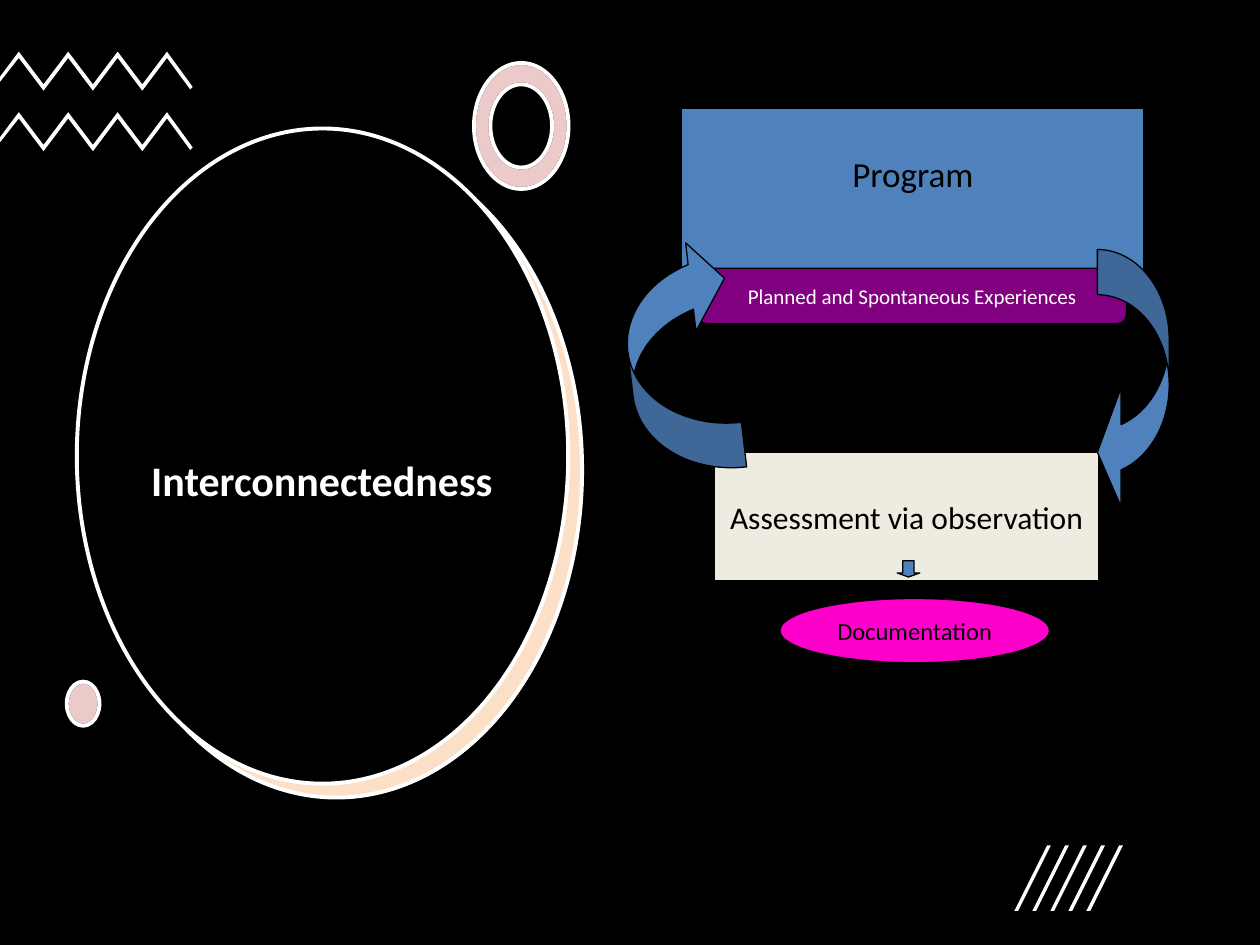
"""Builds the Interconnectedness slide: a titled oval beside a program and assessment cycle."""
import lxml.etree
import pptx
import pptx.util
import pptx.dml.color
import pptx.enum.shapes
import pptx.enum.text
import pptx.oxml.ns

theme = {
    "font": "Calibri", "black": "000000", "white": "FFFFFF", "blue": "4F81BD",
    "peach": "F79646", "red": "C0504D", "plum": "800080", "cream": "EEECE1",
    "pink": "FF00CC", "title": 24, "head": 20.1, "body": 18, "note": 14,
    "small": 12, "thin": 0.75, "thick": 2.25,
}
kinds = pptx.enum.shapes.MSO_SHAPE
anchors = pptx.enum.text.MSO_ANCHOR
name = pptx.oxml.ns.qn
cell = pptx.util.Inches(0.1)
cols, rows = 100, 75


def paint(shape, fill, line=None, width=0, alpha=None):
    shape.shadow.inherit = False
    shape.fill.solid()
    shape.fill.fore_color.rgb = pptx.dml.color.RGBColor.from_string(theme[fill])
    if alpha:
        tone = shape.fill._xPr.find(".//" + name("a:srgbClr"))
        mark = lxml.etree.SubElement(tone, name("a:alpha"))
        mark.set("val", str(alpha * 1000))
    if line:
        shape.line.color.rgb = pptx.dml.color.RGBColor.from_string(theme[line])
        shape.line.width = pptx.util.Pt(width)
    else:
        shape.line.fill.background()


def write(shape, text, size, color, bold=False):
    frame = shape.text_frame
    frame.text = text
    frame.vertical_anchor = anchors.MIDDLE
    para = frame.paragraphs[0]
    para.alignment = pptx.enum.text.PP_ALIGN.CENTER
    font = para.runs[0].font
    font.name, font.bold = theme["font"], bold
    font.size = pptx.util.Pt(theme[size])
    font.color.rgb = pptx.dml.color.RGBColor.from_string(theme[color])


deck = pptx.Presentation()
deck.slide_width, deck.slide_height = cols * cell, rows * cell
slide = deck.slides.add_slide(deck.slide_layouts[5])
shapes = slide.shapes
thin, thick = theme["thin"], theme["thick"]

ovals = [
    (kinds.RECTANGLE, (0, 0, cols, rows), "black", None, 0, None),
    (kinds.OVAL, (7.3, 11.4, 39, 52), "white", None, 0, None),
    (kinds.OVAL, (7.2, 11.3, 39, 52), "peach", "white", thick, 30),
    (kinds.OVAL, (6.1, 10.2, 39, 52), "black", "white", thick, None),
    (kinds.OVAL, (5.3, 54.1, 2.6, 3.5), "white", "black", thick, None),
    (kinds.OVAL, (5.3, 54.1, 2.6, 3.5), "red", "white", thick, 30),
]
for kind, box, fill, line, width, alpha in ovals:
    paint(shapes.add_shape(kind, *[int(n * cell) for n in box]), fill, line, width, alpha)

title = shapes.title
title.left, title.top, title.width, title.height = [int(n * cell) for n in (9, 20.5, 33.1, 35.2)]
write(title, "Interconnectedness", "title", "white", True)
title.text_frame.word_wrap = True
shapes._spTree.append(title._element)

bow = 0.55
knots = [(0, -1), (-bow, -1), (-1, -bow), (-1, 0), (-1, bow), (-bow, 1), (0, 1),
         (bow, 1), (1, bow), (1, 0), (1, -bow), (bow, -1), (0, -1)]
ring = [
    [(41.37 + wide * x, 10 + high * y) for x, y in knots]
    for wide, high in ((3.75, 5), (-2.45, 3.3))
]
waves = shapes.add_group_shape().shapes
forms = []
for top in (4.1, 8.9):
    crest = [(1.5 + 1.96 * i, top + 2.6 * (i % 2)) for i in range(7)]
    under = [(x, y + 0.5) for x, y in reversed(crest)]
    wave = crest + [(15.3, top + 2.8), (15.1, top + 3)] + under + [(0, top + 2.4), (0, top + 2)]
    forms.append((waves, [wave], "white", None, 0, None))
forms.append((shapes, ring, "white", "black", thick, None))
forms.append((shapes, ring, "red", "white", thick, 30))
lines = shapes.add_group_shape().shapes
for i in range(5):
    left = 80.5 + 1.43 * i
    slash = [(left + 0.3, 72.3), (left, 72.3), (left + 2.6, 67.1), (left + 2.9, 67.1)]
    forms.append((lines, [slash], "white", None, 0, None))
for home, loops, fill, line, width, alpha in forms:
    loops = [[(x * cell, y * cell) for x, y in loop] for loop in loops]
    pen = home.build_freeform(*loops[0][0])
    pen.add_line_segments(loops[0][1:], close=True)
    for loop in loops[1:]:
        pen.move_to(*loop[0])
        pen.add_line_segments(loop[1:], close=True)
    form = pen.convert_to_shape()
    paint(form, fill, line, width, alpha)
    if home is shapes:
        legs = list(form._element.iter(name("a:lnTo")))
        for i in range(0, len(legs), 3):
            curve = lxml.etree.Element(name("a:cubicBezTo"))
            legs[i].addprevious(curve)
            for leg in legs[i:i + 3]:
                curve.append(leg[0])
                leg.getparent().remove(leg)

steps = [
    (kinds.FLOWCHART_PROCESS, (54.1, 8.6, 36.7, 12.8), "blue", "Program", "head", "black"),
    (kinds.FLOWCHART_ALTERNATE_PROCESS, (55.4, 21.3, 34, 4.4), "plum",
     "Planned and Spontaneous Experiences", "small", "white"),
    (kinds.FLOWCHART_PROCESS, (56.7, 35.9, 30.5, 10.2), "cream",
     "Assessment via observation", "body", "black"),
    (kinds.OVAL, (61.9, 47.5, 21.4, 5.1), "pink", "Documentation", "note", "black"),
]
for kind, box, fill, text, size, color in steps:
    step = shapes.add_shape(kind, *[int(n * cell) for n in box])
    paint(step, fill, "black", thin)
    write(step, text, size, color)
    step.text_frame.word_wrap = False
    step.text_frame.paragraphs[0].space_after = pptx.util.Pt(6)
    if text == "Program":
        step.text_frame.word_wrap = True
        step.text_frame.vertical_anchor = anchors.TOP
        step.text_frame.margin_top = int(3.5 * cell)

arrows = [
    (kinds.DOWN_ARROW, (71.2, 44.5, 1.8, 1.3), 0, (0.5, 0.25)),
    (kinds.CURVED_LEFT_ARROW, (49.9, 19, 8.3, 18.6), 173.3, (0.43, 0.85, 0.33)),
    (kinds.CURVED_LEFT_ARROW, (87.1, 19.8, 5.7, 20.8), 0, (0.63, 1.65, 0.33)),
]
for kind, box, turn, bends in arrows:
    arrow = shapes.add_shape(kind, *[int(n * cell) for n in box])
    arrow.rotation = turn
    for i, bend in enumerate(bends):
        arrow.adjustments[i] = bend
    paint(arrow, "blue", "black", thin)

deck.save("out.pptx")
